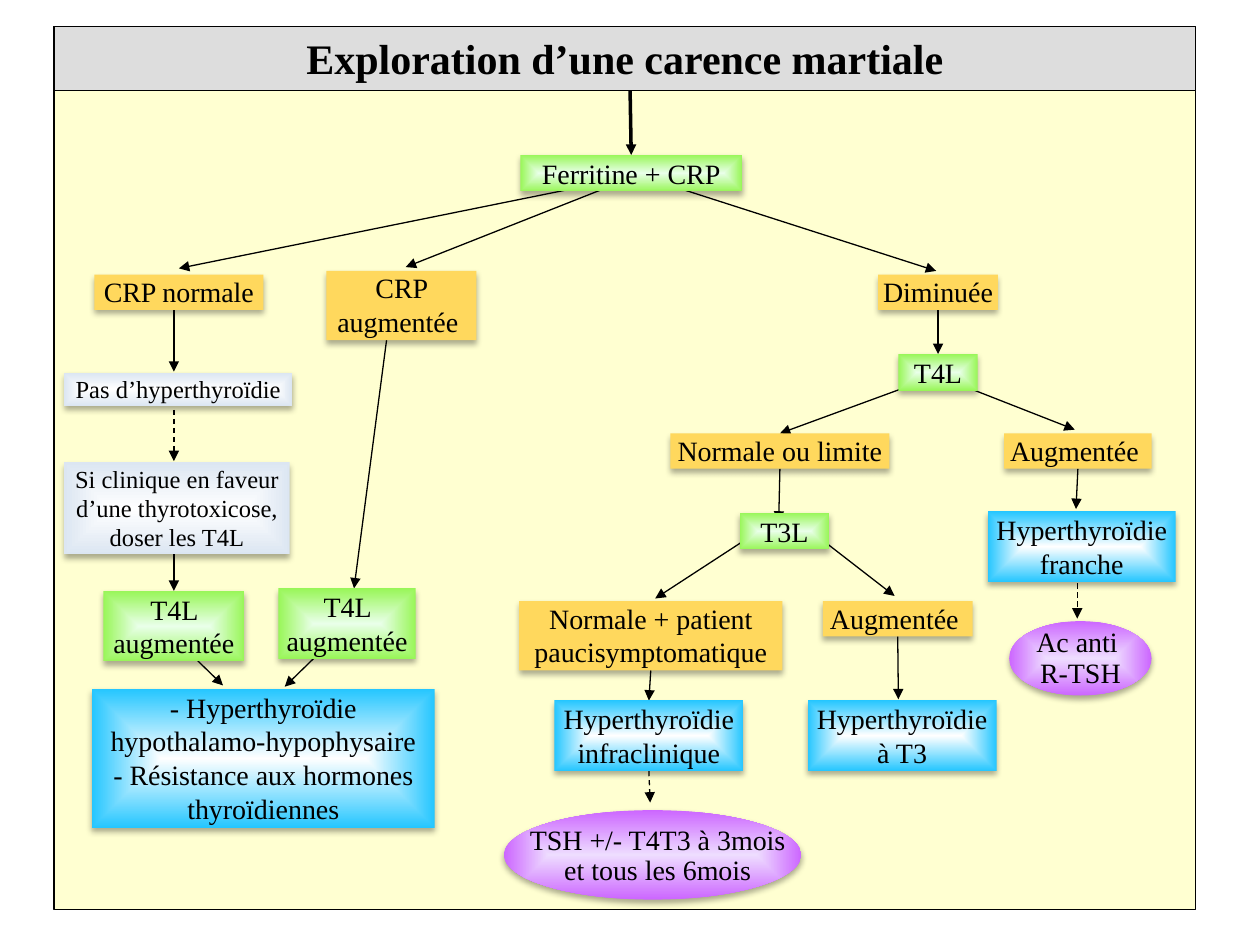
from pptx import Presentation
from pptx.dml.color import RGBColor
from pptx.enum.dml import MSO_LINE
from pptx.enum.shapes import MSO_CONNECTOR, MSO_SHAPE
from pptx.enum.text import MSO_ANCHOR, MSO_AUTO_SIZE, PP_ALIGN
from pptx.oxml import parse_xml
from pptx.oxml.ns import nsdecls, qn
from pptx.util import Pt

PX = 9144  # 100 px to the inch
FONT = "Times New Roman"
BLACK = "000000"
FRAME = (43, 21, 906, 701)
TITLE = ("Exploration d’une carence martiale", (43, 21, 906, 51))

# Box styles: centre colour, edge colour (None = plain), text size, top inset
STYLES = {
    "test": ("E9FFE9", "98F658", 16, 1),
    "result": ("FFD85D", None, 16, 0),
    "diagnosis": ("FFFFFF", "25C6FF", 16, 1),
    "advice": ("FFFFFF", "DCE6F2", 14, 1),
    "followup": ("EEDDFF", "CC66FF", 16, 1),
}

# key: (style, paragraphs, (left, top, width, height))
BOXES = {
    "ferritin": ("test", ["Ferritine + CRP"], (413, 123, 176, 29)),
    "crp_normal": ("result", ["CRP normale"], (75, 218, 134, 28)),
    "crp_high": ("result", ["CRP augmentée "], (259, 215, 119, 55)),
    "reduced": ("result", ["Diminuée "], (697, 218, 95, 28)),
    "no_hyper": ("advice", ["Pas d’hyperthyroïdie"], (51, 296, 181, 26)),
    "clinical": ("advice", ["Si clinique en faveur d’une thyrotoxicose, doser les T4L"],
                 (51, 367, 179, 73)),
    "t4_left": ("test", ["T4L augmentée"], (82, 469, 112, 56)),
    "t4_middle": ("test", ["T4L augmentée"], (221, 467, 109, 56)),
    "central": ("diagnosis", ["- Hyperthyroïdie hypothalamo-hypophysaire",
                              "- Résistance aux hormones thyroïdiennes"],
                (73, 547, 272, 110)),
    "t4": ("test", ["T4L"], (713, 281, 63, 29)),
    "t4_normal": ("result", ["Normale ou limite"], (532, 344, 174, 28)),
    "t4_high": ("result", ["Augmentée "], (797, 344, 117, 28)),
    "t3": ("test", ["T3L"], (587, 407, 71, 29)),
    "t3_normal": ("result", ["Normale + patient paucisymptomatique"], (412, 477, 209, 55)),
    "t3_high": ("result", ["Augmentée "], (653, 477, 119, 28)),
    "subclinical": ("diagnosis", ["Hyperthyroïdie infraclinique"], (440, 556, 150, 56)),
    "t3_hyper": ("diagnosis", ["Hyperthyroïdie à T3"], (641, 556, 150, 56)),
    "overt": ("diagnosis", ["Hyperthyroïdie franche"], (784, 406, 149, 56)),
}

# (lines, ellipse, label)
FOLLOWUPS = [
    (["TSH +/- T4T3 à 3mois et tous les 6mois"], (400, 643, 236, 71), (413, 655, 218, 51)),
    (["Ac anti ", "R-TSH"], (801, 493, 113, 59), (802, 498, 111, 51)),
]

# (x1, y1, x2, y2, box left from its bottom, box entered at its top)
ARROWS = [
    (478, 145, 142, 213, None, None),
    (494, 144, 322, 212, None, None),
    (522, 144, 743, 215, None, None),
    (138, 240, 138, 295, None, None),
    (138, 419, 138, 467, None, "t4_left"),
    (311, 238, 281, 467, None, None),
    (266, 506, 226, 545, None, None),
    (137, 505, 177, 544, None, None),
    (744, 246, 744, 281, "reduced", "t4"),
    (728, 304, 618, 344, None, "t4_normal"),
    (751, 301, 853, 341, None, None),
    (855, 372, 854, 404, "t4_high", None),
    (619, 372, 618, 414, "t4_normal", None),
    (606, 419, 520, 475, None, None),
    (639, 418, 710, 473, None, None),
    (516, 532, 516, 555, "t3_normal", "subclinical"),
    (713, 505, 713, 555, "t3_high", None),
]
DASHED_ARROWS = [
    (138, 311, 138, 366, None, None),
    (515, 612, 516, 637, "subclinical", None),
    (855, 463, 855, 491, None, None),
]
ENTRY_ARROWS = [(500, 68, 500, 123, None, "ferritin")]


def rgb(value):
    return RGBColor.from_string(value)


def emu(lengths):
    return [n * PX for n in lengths]


def add_figure(kind, place, fill, edge=None, outlined=False):
    figure = slide.shapes.add_shape(kind, *emu(place))
    figure.shadow.inherit = False
    if edge:
        figure.fill.background()
        properties = figure._element.spPr
        properties.replace(properties.find(qn("a:noFill")), parse_xml(
            f'<a:gradFill {nsdecls("a")} rotWithShape="1"><a:gsLst>'
            f'<a:gs pos="0"><a:srgbClr val="{fill}"/></a:gs>'
            f'<a:gs pos="100000"><a:srgbClr val="{edge}"/></a:gs></a:gsLst>'
            '<a:path path="shape"><a:fillToRect l="50000" t="50000" r="50000" b="50000"/>'
            '</a:path></a:gradFill>'))
    else:
        figure.fill.solid()
        figure.fill.fore_color.rgb = rgb(fill)
    if outlined:
        figure.line.color.rgb = rgb(BLACK)
        figure.line.width = Pt(0.75)
    else:
        figure.line.fill.background()
        figure._element.spPr.find(qn("a:effectLst")).append(parse_xml(
            f'<a:outerShdw {nsdecls("a")} blurRad="{Pt(3.5)}" dist="{Pt(2.2)}" '
            'dir="5400000" rotWithShape="0"><a:srgbClr val="000000">'
            '<a:alpha val="32000"/></a:srgbClr></a:outerShdw>'))
    return figure


def write(holder, paragraphs, size, insets, bold=False, spacing=None):
    frame = holder.text_frame
    frame.word_wrap = True
    frame.auto_size = MSO_AUTO_SIZE.SHAPE_TO_FIT_TEXT
    frame.vertical_anchor = MSO_ANCHOR.TOP
    (frame.margin_left, frame.margin_top,
     frame.margin_right, frame.margin_bottom) = emu(insets)
    for i, lines in enumerate(paragraphs):
        paragraph = frame.add_paragraph() if i else frame.paragraphs[0]
        paragraph.alignment = PP_ALIGN.CENTER
        paragraph.line_spacing = spacing
        for j, line in enumerate(lines):
            if j:
                paragraph.add_line_break()
            run = paragraph.add_run()
            run.text = line
            run.font.name = FONT
            run.font.size = Pt(size)
            run.font.bold = bold
            run.font.color.rgb = rgb(BLACK)


def add_arrow(ends, width, dashed):
    arrow = slide.shapes.add_connector(MSO_CONNECTOR.STRAIGHT, *emu(ends))
    arrow.line.color.rgb = rgb(BLACK)
    arrow.line.width = Pt(width)
    if dashed:
        arrow.line.dash_style = MSO_LINE.DASH
    arrow.line._get_or_add_ln().append(
        parse_xml(f'<a:tailEnd {nsdecls("a")} type="triangle"/>'))
    arrow._element.spPr.append(parse_xml(f'<a:effectLst {nsdecls("a")}/>'))
    return arrow


deck = Presentation()
deck.slide_width, deck.slide_height = emu((1000, 750))
slide = deck.slides.add_slide(deck.slide_layouts[6])

# Frame, then arrows so that the boxes cover their ends
add_figure(MSO_SHAPE.RECTANGLE, FRAME, "FFFFD1", outlined=True)
links = []
for arrows, width, dashed in ((ENTRY_ARROWS, 2, False), (ARROWS, 0.75, False),
                              (DASHED_ARROWS, 0.75, True)):
    for *ends, source, target in arrows:
        links.append((add_arrow(ends, width, dashed), source, target))

# Title bar
title, title_place = TITLE
title_bar = add_figure(MSO_SHAPE.RECTANGLE, title_place, "DDDDDD", outlined=True)
write(title_bar, [[title]], 24, (10, 5, 10, 5), bold=True)

# Decision boxes
steps = {}
for key, (style, paragraphs, place) in BOXES.items():
    centre, edge, size, top = STYLES[style]
    steps[key] = add_figure(MSO_SHAPE.RECTANGLE, place, centre, edge)
    write(steps[key], [[text] for text in paragraphs], size, (2, top, 2, 1))

# Follow-up ellipses with their labels
centre, edge, size, top = STYLES["followup"]
for lines, ellipse_place, label_place in FOLLOWUPS:
    add_figure(MSO_SHAPE.OVAL, ellipse_place, centre, edge)
    label = slide.shapes.add_textbox(*emu(label_place))
    write(label, [lines], size, (2, top, 2, 1), spacing=0.9)

# Join arrows to the boxes
for arrow, source, target in links:
    if source:
        arrow.begin_connect(steps[source], 2)
    if target:
        arrow.end_connect(steps[target], 0)

deck.save("out.pptx")
